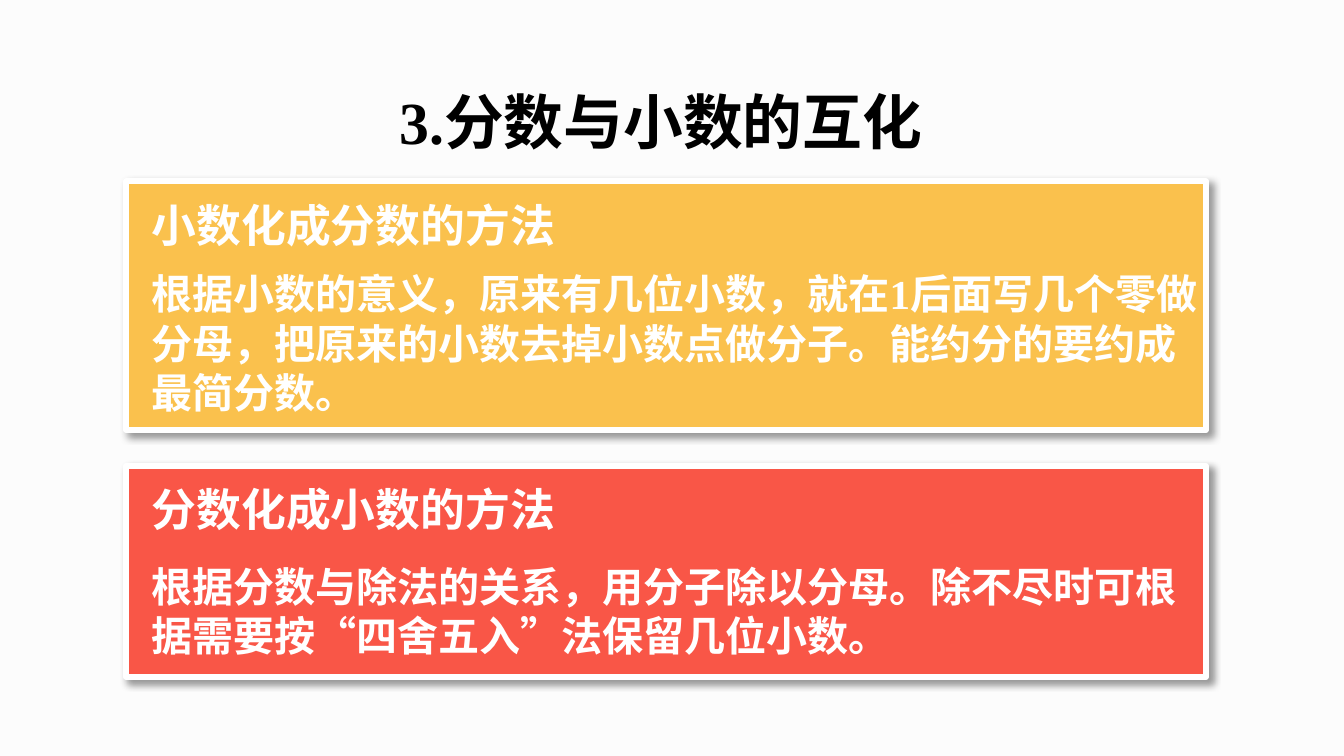
import pptx
import pptx.util
import pptx.dml.color
import pptx.enum.text
import pptx.enum.shapes
import pptx.oxml
import pptx.oxml.ns

Cm = pptx.util.Cm
Pt = pptx.util.Pt
ANCHOR = pptx.enum.text.MSO_ANCHOR
FONT = "Times New Roman"
INSET = Cm(0.2)
CARDS = [
    {
        "box": (2.39, 3.43, 20.4, 4.7), "fill": "FAC14D",
        "heading": "小数化成分数的方法",
        "body": "根据小数的意义，原来有几位小数，就在1后面写几个零做分母，"
                "把原来的小数去掉小数点做分子。能约分的要约成最简分数。",
        "body_box": (1.45, 20.3, 3.23),
    },
    {
        "box": (2.39, 8.81, 20.4, 3.99), "fill": "F95647",
        "heading": "分数化成小数的方法",
        "body": "根据分数与除法的关系，用分子除以分母。除不尽时可根据需要按“四舍五入”法保留几位小数。",
        "body_box": (1.6, 20, 2.29),
    },
]


def rgb(value):
    """Return the colour for a hex string."""
    return pptx.dml.color.RGBColor.from_string(value)


def set_all(obj, values):
    """Set each attribute of obj from a dict."""
    for name, value in values.items():
        setattr(obj, name, value)


def write(sp, text, size, color, frame):
    """Put one bold, left-aligned paragraph in a shape."""
    tf = sp.text_frame
    set_all(tf, {"auto_size": pptx.enum.text.MSO_AUTO_SIZE.NONE, **frame})
    p = tf.paragraphs[0]
    p.alignment = pptx.enum.text.PP_ALIGN.LEFT
    r = p.add_run()
    r.text = text
    set_all(r.font, {"name": FONT, "size": Pt(size), "bold": True})
    r.font.color.rgb = rgb(color)


def add_shadow(sp):
    """Give a shape a soft shadow to the lower right."""
    sp.shadow.inherit = False
    effects = sp._element.spPr.find(pptx.oxml.ns.qn("a:effectLst"))
    effects.append(pptx.oxml.parse_xml(
        f'<a:outerShdw {pptx.oxml.ns.nsdecls("a")} blurRad="{Pt(4)}" dist="{Pt(3)}" '
        'dir="2700000" algn="tl" rotWithShape="0">'
        '<a:srgbClr val="000000"><a:alpha val="40000"/></a:srgbClr></a:outerShdw>'))


def place_title(s, text, left, top, width, height):
    """Move and format the title placeholder."""
    sp = s.shapes.title
    set_all(sp, {"left": Cm(left), "top": Cm(top), "width": Cm(width), "height": Cm(height)})
    write(sp, text, 32, "000000", {"word_wrap": False, "vertical_anchor": ANCHOR.MIDDLE})


def add_card(s, left, top, width, height, card):
    """Build a grouped panel with a heading and a body text."""
    shapes = s.shapes.add_group_shape().shapes
    panel = shapes.add_shape(pptx.enum.shapes.MSO_SHAPE.RECTANGLE,
                             Cm(left), Cm(top), Cm(width), Cm(height))
    panel.fill.solid()
    panel.fill.fore_color.rgb = rgb(card["fill"])
    panel.line.color.rgb = rgb("FFFFFF")
    panel.line.width = Pt(3.25)
    add_shadow(panel)

    insets = {f"margin_{side}": INSET for side in ("left", "top", "right", "bottom")}
    offset, body_width, body_height = card["body_box"]
    body = shapes.add_textbox(Cm(left + 0.28), Cm(top + offset), Cm(body_width), Cm(body_height))
    write(body, card["body"], 22, "FFFFFF",
          {**insets, "word_wrap": True, "vertical_anchor": ANCHOR.TOP})
    heading = shapes.add_textbox(Cm(left + 0.28), Cm(top + 0.22), Cm(8.05), Cm(1.3))
    write(heading, card["heading"], 24, "FFFFFF",
          {**insets, "word_wrap": False, "vertical_anchor": ANCHOR.BOTTOM})


def main():
    """Build and save the slide."""
    prs = pptx.Presentation()
    set_all(prs, {"slide_width": Cm(25.4), "slide_height": Cm(14.29)})
    s = prs.slides.add_slide(prs.slide_layouts[5])
    s.background.fill.solid()
    s.background.fill.fore_color.rgb = rgb("FCFCFC")
    place_title(s, "3.分数与小数的互化", 7.29, 1.47, 10.82, 1.63)
    for card in CARDS:
        add_card(s, *card["box"], card)
    prs.save("out.pptx")


if __name__ == "__main__":
    main()
